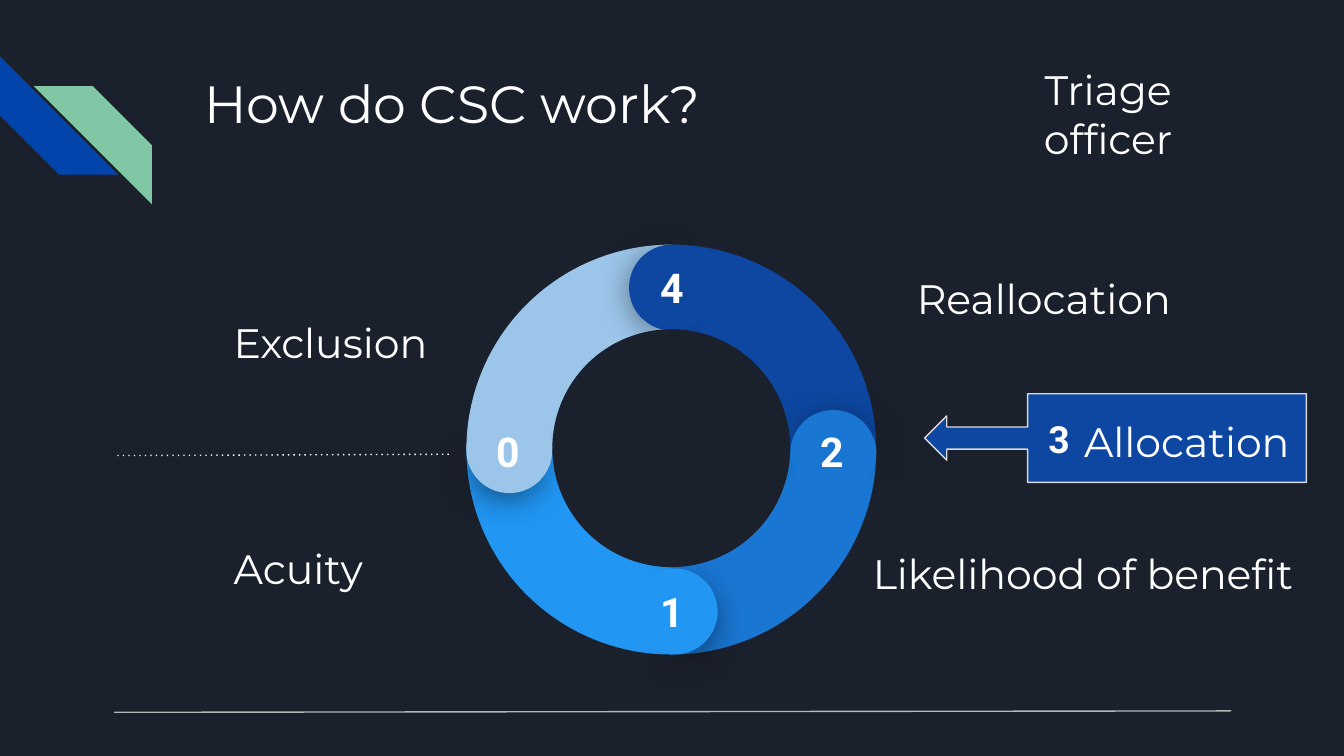
from lxml import etree
from pptx import Presentation
from pptx.dml.color import RGBColor
from pptx.enum.shapes import MSO_CONNECTOR, MSO_SHAPE
from pptx.enum.text import MSO_ANCHOR, PP_ALIGN
from pptx.oxml import parse_xml
from pptx.oxml.ns import nsdecls, qn
from pptx.util import Inches, Pt

WHITE = RGBColor(0xFF, 0xFF, 0xFF)
DARK = RGBColor(0x1B, 0x21, 0x2C)
ROYAL = RGBColor(0x01, 0x45, 0xAC)
GREEN = RGBColor(0x82, 0xC7, 0xA5)
PALE = RGBColor(0x9B, 0xC5, 0xE9)
SKY = RGBColor(0x21, 0x96, 0xF3)
BLUE = RGBColor(0x19, 0x76, 0xD2)
NAVY = RGBColor(0x0D, 0x47, 0xA1)
GREY = RGBColor(0xB7, 0xB7, 0xB7)
PEARL = RGBColor(0xD9, 0xD9, 0xD9)
LEFT, MID, RIGHT = PP_ALIGN.LEFT, PP_ALIGN.CENTER, PP_ALIGN.RIGHT

# Content: text, box, alignment
TITLE = "How do CSC work?"
LABELS = [
    ("Exclusion", (1.64, 2.3, 2.03, 0.49), LEFT),
    ("Acuity", (1.64, 3.98, 1.17, 0.49), LEFT),
    ("Reallocation", (6.32, 1.97, 2.49, 0.49), RIGHT),
    ("Likelihood of benefit", (6.28, 4.02, 3.44, 0.49), RIGHT),
    ("Triage officer", (7.4, 0.6, 1.69, 0.49), MID),
]
# Ring quarters, clockwise from the left
ARCS = [PALE, NAVY, BLUE, SKY]
# Round ends, anticlockwise: digit, colour, corners of disc, chord and text
CAPS = [
    ("0", PALE, (3.48, 3.07), (3.47, 3.03), (3.5, 3.07)),
    ("1", SKY, (4.74, 4.28), (4.7, 4.23), (4.72, 4.26)),
    ("2", BLUE, (5.93, 3.07), (5.88, 3.05), (5.91, 3.07)),
    ("4", NAVY, (4.7, 1.83), (4.68, 1.82), (4.72, 1.85)),
]
SHADE = f"""<a:effectLst {nsdecls('a')}>
<a:outerShdw blurRad="228600" dist="50800" dir="5400000" algn="t" rotWithShape="0">
<a:srgbClr val="000000"><a:alpha val="55000"/></a:srgbClr>
</a:outerShdw></a:effectLst>"""

# Wide slide, 16 to 9
deck = Presentation()
deck.slide_width = Inches(10)
deck.slide_height = deck.slide_width * 9 // 16
slide = deck.slides.add_slide(deck.slide_layouts[5])
slide.background.fill.solid()
slide.background.fill.fore_color.rgb = DARK


def place(item, box):
    item.left, item.top, item.width, item.height = map(Inches, box)


def write(text, box, item=None, size=22, face="Montserrat", bold=False,
          align=LEFT, anchor=MSO_ANCHOR.TOP):
    item = item or slide.shapes.add_textbox(0, 0, 0, 0)
    place(item, box)
    frame = item.text_frame
    frame.text = text
    frame.word_wrap = True
    frame.vertical_anchor = anchor
    frame.margin_left = frame.margin_right = Inches(0.1)
    frame.margin_top = frame.margin_bottom = Inches(0.1)
    para = frame.paragraphs[0]
    para.alignment = align
    font = para.runs[0].font
    font.name, font.size, font.bold = face, Pt(size), bold
    font.color.rgb = WHITE


def draw(kind, box, fill, turn=0, adj=(), edge=None):
    item = slide.shapes.add_shape(kind, *map(Inches, box))
    item.shadow.inherit = False
    item.rotation = turn
    for i, val in enumerate(adj):
        item.adjustments[i] = val
    item.fill.solid()
    item.fill.fore_color.rgb = fill
    if edge:
        item.line.color.rgb, item.line.width = edge, Pt(0.75)
    else:
        item.line.fill.background()
    return item


def rule(start, end, tint, dash=None):
    item = slide.shapes.add_connector(
        MSO_CONNECTOR.STRAIGHT, *map(Inches, start + end))
    item.line.color.rgb, item.line.width = tint, Pt(0.75)
    if dash:
        line = item._element.spPr.find(qn("a:ln"))
        etree.SubElement(line, qn("a:prstDash")).set("val", dash)
    etree.SubElement(item._element.spPr, qn("a:effectLst"))


# Corner stripes
draw(MSO_SHAPE.DIAGONAL_STRIPE, (0, 0.42, 0.88, 0.88), ROYAL, 270, [0.5])
green = draw(MSO_SHAPE.DIAGONAL_STRIPE, (0.25, 0.64, 0.88, 0.88), GREEN, 0, [0.5])
green._element.spPr.xfrm.set("flipH", "1")

# Title, labels and rules
write(TITLE, (1.42, 0.43, 7.7, 1), item=slide.shapes.title, size=28)
for text, box, align in LABELS:
    write(text, box, align=align, anchor=MSO_ANCHOR.MIDDLE)
rule((3.34, 3.38), (0.85, 3.39), WHITE, "dot")
rule((9.16, 5.29), (0.85, 5.3), GREY)

# Ring: quarters, then round ends with digits, then the hole
for i, tint in enumerate(ARCS):
    draw(MSO_SHAPE.PIE, (3.47, 1.82, 3.05, 3.05), tint, 90 * i, [107.96, 162.01])
for i, (digit, tint, disc, chord, spot) in enumerate(CAPS):
    turn = 360 - 90 * i
    span = [196.87, 77.71] if digit == "2" else [189.54, 83.81]
    end = draw(MSO_SHAPE.PIE, disc + (0.57, 0.57), tint, (turn + 39.5) % 360, span)
    props = end._element.spPr
    props.replace(props.find(qn("a:effectLst")), parse_xml(SHADE))
    draw(MSO_SHAPE.CHORD, chord + (0.64, 0.64), tint, (turn + 4.1) % 360,
         [25.01, 18.12])
    write(digit, spot + (0.56, 0.29), face="Roboto", bold=True, align=MID)
draw(MSO_SHAPE.OVAL, (4.11, 2.45, 1.77, 1.77), DARK)

# Allocation callout
draw(MSO_SHAPE.LEFT_ARROW_CALLOUT, (6.88, 2.93, 2.84, 0.66), NAVY,
     adj=[0.25, 0.25, 0.25, 0.73], edge=PEARL)
write("Allocation", (7.94, 3, 1.78, 0.49), align=MID)
write("3", (7.6, 3, 0.56, 0.49), size=20, face="Roboto", bold=True, align=MID)

deck.save("out.pptx")
